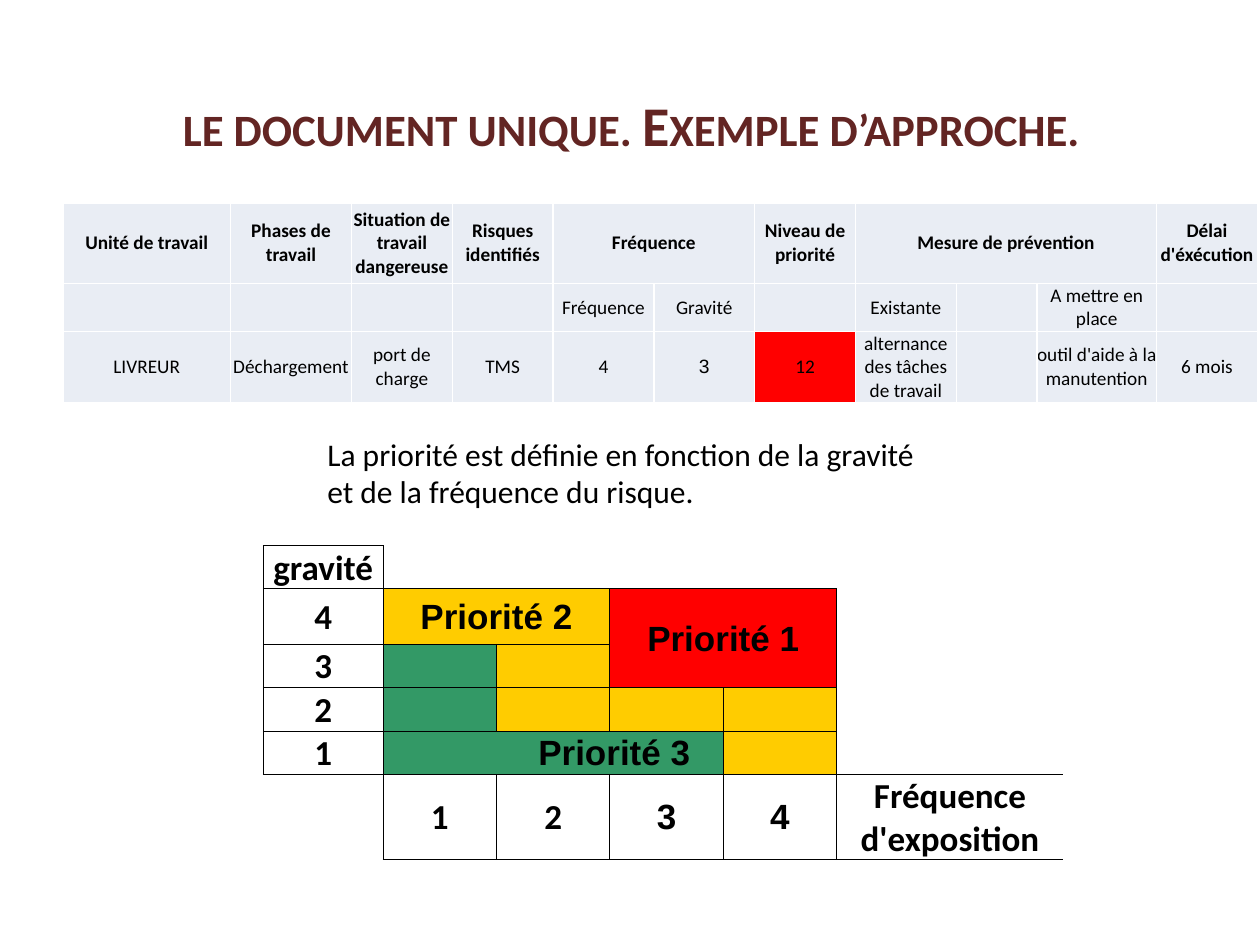
from dataclasses import dataclass

from lxml.etree import SubElement
from pptx import Presentation
from pptx.dml.color import RGBColor as RGB
from pptx.enum.text import MSO_ANCHOR as Anchor, PP_ALIGN as Align
from pptx.oxml.ns import qn
from pptx.util import Inches, Pt


@dataclass(frozen=True)
class Theme:
    font: str = "Calibri"
    alt: str = "Arial"
    title: str = "632523"
    ink: str = "000000"
    pale: str = "E9EDF4"
    white: str = "FFFFFF"
    red: str = "FF0000"
    gold: str = "FFCC00"
    green: str = "339966"
    head: int = 32
    body: int = 18
    grid: int = 20
    small: int = 11


T = Theme()
FILLS = {"p": T.pale, "r": T.red, "y": T.gold, "g": T.green}
SIDES = {"L": (0, -1), "R": (0, 1), "T": (-1, 0), "B": (1, 0)}


@dataclass
class Grid:
    """Table content; mask has a fill key per cell, o for open, space for blank."""
    box: tuple
    cols: list
    rows: list
    texts: list
    mask: list
    spans: list
    alts: set
    size: int
    line: tuple
    inset: float = 0
    bold: int = 0


RISKS = Grid(
    box=(0.5, 1.61),
    cols=[1.33, 0.96, 0.8, 0.8, 0.8, 0.8, 0.8, 0.8, 0.64, 0.95, 0.8],
    rows=[0.64, 0.38, 0.57],
    texts=[
        ["Unité de travail", "Phases de travail", "Situation de travail dangereuse",
         "Risques identifiés", "Fréquence", "", "Niveau de priorité",
         "Mesure de prévention", "", "", "Délai d'éxécution"],
        ["", "", "", "", "Fréquence", "Gravité", "", "Existante", "",
         "A mettre en place", ""],
        ["LIVREUR", "Déchargement", "port de charge", "TMS", "4", "3", "12",
         "alternance des tâches de travail", "", "outil d'aide à la manutention",
         "6 mois"],
    ],
    mask=["p" * 11, "p" * 11, "pppppprpppp"],
    spans=[(0, 4, 1, 2), (0, 7, 1, 3)],
    alts={(2, 5)}, size=T.small, line=(T.white, 1), bold=1,
)

MATRIX = Grid(
    box=(2.09, 4.33),
    cols=[0.95] + [0.9] * 6,
    rows=[0.34, 0.44, 0.34, 0.34, 0.34, 0.68],
    texts=[
        ["gravité"],
        ["4", "Priorité 2", "", "Priorité 1"],
        ["3"],
        ["2"],
        ["1", "Priorité 3"],
        ["", "1", "2", "3", "4", "Fréquence d'exposition"],
    ],
    mask=["o      ", "oyyrr  ", "ogyrr  ", "ogyyy  ", "ogggy  ", " oooooo"],
    spans=[(1, 1, 1, 2), (1, 3, 2, 2), (4, 1, 1, 3), (5, 5, 1, 2)],
    alts={(1, 1), (1, 3), (4, 1), (5, 3), (5, 4)},
    size=T.grid, line=(T.ink, 0.5), inset=0.01, bold=6,
)


def style(para, size, color=T.ink, font=T.font, bold=False):
    for run in para.runs:
        run.font.size = Pt(size)
        run.font.name = font
        run.font.bold = bold
        run.font.color.rgb = RGB.from_string(color)


def add_title(slide, text):
    shape = slide.shapes.title
    shape.left, shape.top, shape.width, shape.height = map(Inches, (0.51, 0.36, 9, 1.25))
    frame = shape.text_frame
    frame.text = text
    frame.vertical_anchor = Anchor.MIDDLE
    para = frame.paragraphs[0]
    para.alignment = Align.CENTER
    style(para, T.head, T.title, bold=True)
    para.runs[0].font._element.set("cap", "small")


def add_note(slide, text):
    frame = slide.shapes.add_textbox(*map(Inches, (2.5, 3.4, 5, 0.71))).text_frame
    frame.word_wrap = True
    frame.text = text
    style(frame.paragraphs[0], T.body)


def edge(cell, index, side, line):
    """Put one border before the cell fill; no line means no border."""
    props = cell._tc.get_or_add_tcPr()
    node = SubElement(props, qn("a:ln" + side))
    props.insert(index, node)
    if line is None:
        SubElement(node, qn("a:noFill"))
        return
    color, width = line
    node.set("w", str(Pt(width)))
    SubElement(SubElement(node, qn("a:solidFill")), qn("a:srgbClr")).set("val", color)


def fill_cell(cell, key):
    if key in FILLS:
        cell.fill.solid()
        cell.fill.fore_color.rgb = RGB.from_string(FILLS[key])
    else:
        cell.fill.background()


def add_grid(slide, grid):
    size = (sum(grid.cols), sum(grid.rows))
    table = slide.shapes.add_table(
        len(grid.rows), len(grid.cols), *map(Inches, grid.box + size)).table
    table.first_row = table.horz_banding = False
    for col, width in zip(table.columns, grid.cols):
        col.width = Inches(width)
    for row, height in zip(table.rows, grid.rows):
        row.height = Inches(height)

    owner = {(r, c): (r, c) for r, keys in enumerate(grid.mask)
             for c, key in enumerate(keys) if key != " "}
    for r, c, high, wide in grid.spans:
        table.cell(r, c).merge(table.cell(r + high - 1, c + wide - 1))
        owner.update({(r + i, c + j): (r, c) for i in range(high) for j in range(wide)})

    for r, keys in enumerate(grid.mask):
        for c, key in enumerate(keys):
            cell = table.cell(r, c)
            cell.margin_left = cell.margin_right = cell.margin_top = Inches(grid.inset)
            cell.margin_bottom = 0
            cell.vertical_anchor = Anchor.MIDDLE
            fill_cell(cell, key)
            for i, (side, (down, right)) in enumerate(SIDES.items()):
                split = owner.get((r, c)) != owner.get((r + down, c + right))
                edge(cell, i, side, grid.line if split else None)

    for r, row in enumerate(grid.texts):
        for c, text in enumerate(row):
            if text:
                cell = table.cell(r, c)
                cell.text = text
                para = cell.text_frame.paragraphs[0]
                para.alignment = Align.CENTER
                font = T.alt if (r, c) in grid.alts else T.font
                style(para, grid.size, font=font, bold=r < grid.bold)
    return table


def main():
    deck = Presentation()
    deck.slide_width, deck.slide_height = Inches(10), Inches(7.5)
    slide = deck.slides.add_slide(deck.slide_layouts[5])
    add_title(slide, "le document unique. Exemple d’approche.")
    add_grid(slide, RISKS)
    add_note(slide, "La priorité est définie en fonction de la gravité "
                    "et de la fréquence du risque.")
    matrix = add_grid(slide, MATRIX)
    matrix.cell(4, 1).margin_left = Inches(0.98)
    deck.save("out.pptx")


if __name__ == "__main__":
    main()
